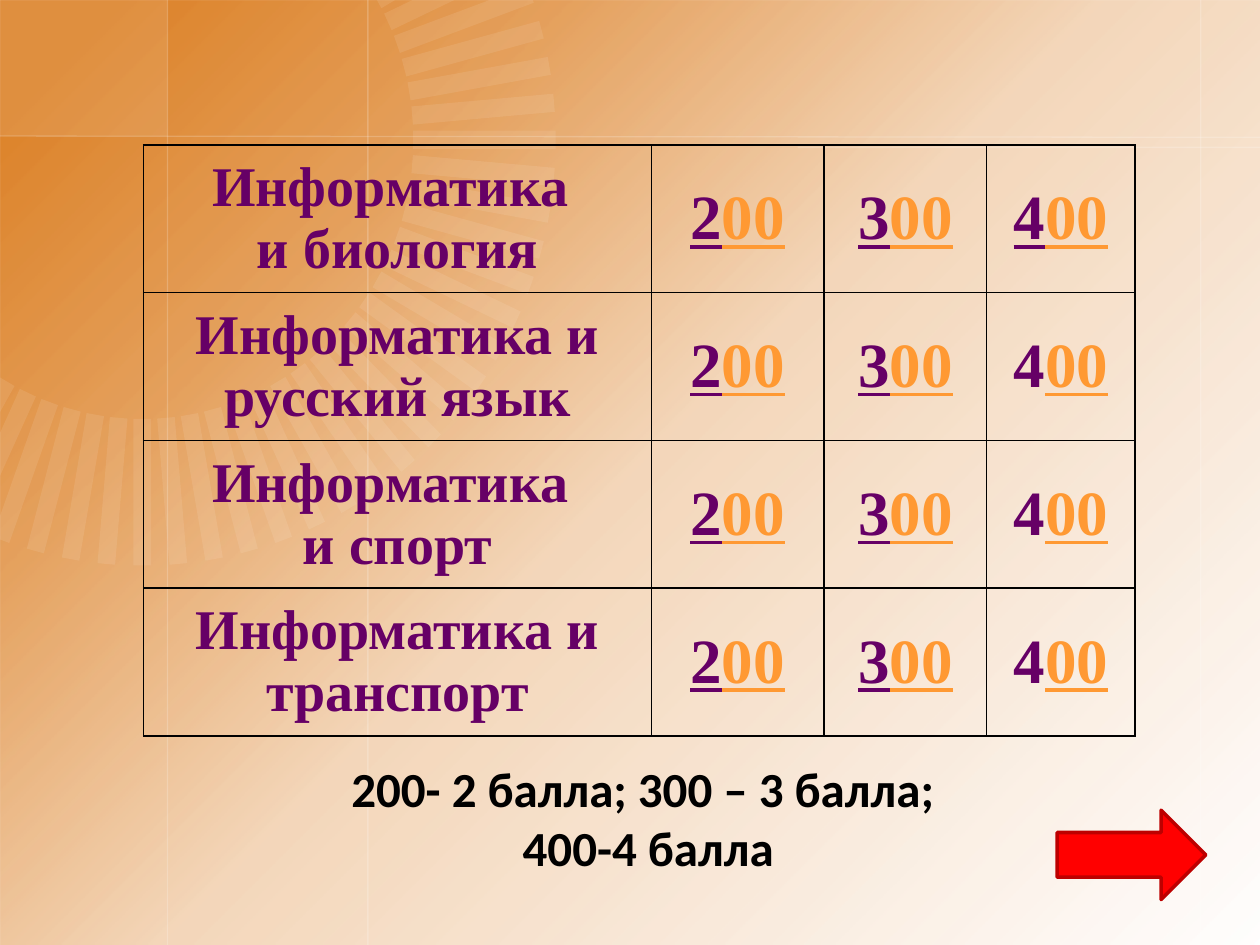
from dataclasses import dataclass
from math import cos, radians, sin

from lxml import etree
from pptx import Presentation
from pptx.dml.color import RGBColor
from pptx.enum.shapes import MSO_CONNECTOR, MSO_SHAPE
from pptx.enum.text import MSO_ANCHOR, MSO_AUTO_SIZE, PP_ALIGN
from pptx.oxml import parse_xml
from pptx.oxml.ns import nsdecls, qn
from pptx.util import Inches, Pt


@dataclass(frozen=True)
class Theme:
    glow: str = "D66B00"
    white: str = "FFFFFF"
    ray: str = "FFF7EF"
    topic: str = "660066"
    link: str = "FF9933"
    ink: str = "000000"
    arrow: str = "FF0000"
    arrow_edge: str = "BD0000"
    table_font: str = "Times New Roman"
    title_font: str = "Calibri"
    topic_size: int = 32
    score_size: int = 36
    title_size: int = 28


THEME = Theme()
WIDTH, HEIGHT = 10, 7.5
TOPICS = [
    ["Информатика ", "и биология"],
    ["Информатика и русский язык"],
    ["Информатика ", "и спорт"],
    ["Информатика и транспорт"],
]
SCORES = "234"


def rgb(code):
    return RGBColor.from_string(code)


def set_alpha(color_parent, percent):
    color = next(color_parent.iter(qn("a:srgbClr")))
    etree.SubElement(color, qn("a:alpha")).set("val", str(percent * 1000))


def paint(shape, color, percent):
    """Plain translucent fill without outline or shadow."""
    shape.fill.solid()
    shape.fill.fore_color.rgb = rgb(color)
    set_alpha(shape.fill._xPr, percent)
    shape.line.fill.background()
    shape.shadow.inherit = False


def add_glow(slide, left, top, width, height):
    glow = slide.shapes.add_shape(
        MSO_SHAPE.RECTANGLE, Inches(left), Inches(top), Inches(width), Inches(height))
    glow.line.fill.background()
    glow.shadow.inherit = False
    glow.fill.gradient()
    gradient = glow.fill._xPr.find(qn("a:gradFill"))
    stops = "".join(
        f'<a:gs pos="{position * 1000}"><a:srgbClr val="{THEME.glow}">'
        f'<a:alpha val="{alpha * 1000}"/></a:srgbClr></a:gs>'
        for position, alpha in [(6, 83), (26, 63), (50, 27), (100, 0)])
    gradient.getparent().replace(gradient, parse_xml(
        f'<a:gradFill {nsdecls("a")} rotWithShape="1"><a:gsLst>{stops}</a:gsLst>'
        '<a:lin ang="2700000" scaled="0"/></a:gradFill>'))


def add_guides(slide, left, top, width, height):
    corner = slide.shapes.add_shape(
        MSO_SHAPE.RECTANGLE, Inches(left), Inches(top), Inches(1.33), Inches(1.08))
    paint(corner, THEME.white, 10)
    right, bottom = left + width, top + height
    verticals = [(left + x, top, left + x, bottom) for x in (1.33, 9.53, 2.92)]
    horizontals = [(left, top + 1.08, right, top + 1.09),
                   (left + 6.33, top + 1.17, right, top + 1.17)]
    for ends in verticals + horizontals:
        guide = slide.shapes.add_connector(MSO_CONNECTOR.STRAIGHT, *map(Inches, ends))
        guide.line.width = Pt(0.75)
        guide.line.color.rgb = rgb(THEME.white)
        properties = guide.line._get_or_add_ln()
        set_alpha(properties, 20)
        etree.SubElement(properties.getparent(), qn("a:effectLst"))


def clip(points, axis):
    """Cut away the part of an outline that lies below zero on one axis."""
    kept = []
    for start, end in zip(points, points[1:] + points[:1]):
        if start[axis] >= 0:
            kept.append(start)
        if (start[axis] >= 0) != (end[axis] >= 0):
            share = start[axis] / (start[axis] - end[axis])
            kept.append(tuple(a + share * (b - a) for a, b in zip(start, end)))
    return kept


def add_rays(slide, center_x, center_y, inner, outer):
    half_width, stretch = 0.07, 1.03
    for degrees in range(-30, 121, 5):
        c, s = cos(radians(degrees)), sin(radians(degrees))
        corners = [(inner, -half_width), (outer, -half_width),
                   (outer, half_width), (inner, half_width)]
        outline = [(center_x + r * c - w * s, center_y + stretch * (r * s + w * c))
                   for r, w in corners]
        outline = clip(clip(outline, 0), 1)
        points = [(Inches(x), Inches(y)) for x, y in outline]
        builder = slide.shapes.build_freeform(*points[0])
        builder.add_line_segments(points[1:], close=True)
        paint(builder.convert_to_shape(), THEME.ray, 10)


def outline_cell(cell):
    cell.fill.background()
    properties = cell._tc.get_or_add_tcPr()
    for index, side in enumerate(("lnL", "lnR", "lnT", "lnB")):
        properties.insert(index, parse_xml(
            f'<a:{side} {nsdecls("a")} w="12700"><a:solidFill>'
            f'<a:srgbClr val="{THEME.ink}"/></a:solidFill></a:{side}>'))


def format_cell_paragraph(paragraph, size):
    paragraph.alignment = PP_ALIGN.CENTER
    paragraph.font.name = THEME.table_font
    paragraph.font.size = Pt(size)
    paragraph.font.bold = True


def fill_topic(cell, lines):
    cell.text = "\n".join(lines)
    for paragraph in cell.text_frame.paragraphs:
        format_cell_paragraph(paragraph, THEME.topic_size)
        paragraph.font.color.rgb = rgb(THEME.topic)


def fill_score(cell, digit, underline_digit):
    paragraph = cell.text_frame.paragraphs[0]
    format_cell_paragraph(paragraph, THEME.score_size)
    for text, color, underline in [(digit, THEME.topic, underline_digit),
                                   ("00", THEME.link, True)]:
        run = paragraph.add_run()
        run.text = text
        run.font.color.rgb = rgb(color)
        run.font.underline = underline


def add_score_board(slide, left, top, width, height):
    board = slide.shapes.add_table(
        len(TOPICS), len(SCORES) + 1,
        Inches(left), Inches(top), Inches(width), Inches(height)).table
    board.first_row = board.horz_banding = False
    for column, share in zip(board.columns, (4.03, 1.37, 1.29, 1.18)):
        column.width = Inches(share)
    for index, lines in enumerate(TOPICS):
        topic, *scores = board.rows[index].cells
        fill_topic(topic, lines)
        for digit, score in zip(SCORES, scores):
            fill_score(score, digit, digit != "4" or index == 0)
        for cell in (topic, *scores):
            cell.vertical_anchor = MSO_ANCHOR.MIDDLE
            outline_cell(cell)


def place_title(slide, left, top, width, height):
    title = slide.shapes.title
    slide.shapes._spTree.append(title._element)  # bring above the backdrop
    title.left, title.top = Inches(left), Inches(top)
    title.width, title.height = Inches(width), Inches(height)
    frame = title.text_frame
    frame.text = "200- 2 балла; 300 – 3 балла; \v400-4 балла"
    frame.word_wrap = True
    frame.auto_size = MSO_AUTO_SIZE.NONE
    frame.vertical_anchor = MSO_ANCHOR.MIDDLE
    paragraph = frame.paragraphs[0]
    paragraph.alignment = PP_ALIGN.CENTER
    paragraph.font.name = THEME.title_font
    paragraph.font.size = Pt(THEME.title_size)
    paragraph.font.bold = True
    paragraph.font.color.rgb = rgb(THEME.ink)


def add_next_arrow(slide, left, top, width, height):
    arrow = slide.shapes.add_shape(
        MSO_SHAPE.RIGHT_ARROW, Inches(left), Inches(top), Inches(width), Inches(height))
    arrow.fill.solid()
    arrow.fill.fore_color.rgb = rgb(THEME.arrow)
    arrow.line.color.rgb = rgb(THEME.arrow_edge)
    arrow.line.width = Pt(2)
    arrow.shadow.inherit = False


def main():
    deck = Presentation()
    deck.slide_width, deck.slide_height = Inches(WIDTH), Inches(HEIGHT)
    slide = deck.slides.add_slide(deck.slide_layouts.get_by_name("Title Only"))
    # Backdrop
    add_glow(slide, 0, 0, WIDTH, HEIGHT)
    add_guides(slide, 0, 0, WIDTH, HEIGHT)
    add_rays(slide, 1.13, 1.11, 2.15, 3.28)
    # Content
    add_score_board(slide, 1.14, 1.15, 7.87, 4.69)
    place_title(slide, 1.06, 5.95, 8.17, 1.08)
    add_next_arrow(slide, 8.39, 6.43, 1.18, 0.71)
    deck.save("out.pptx")


if __name__ == "__main__":
    main()
